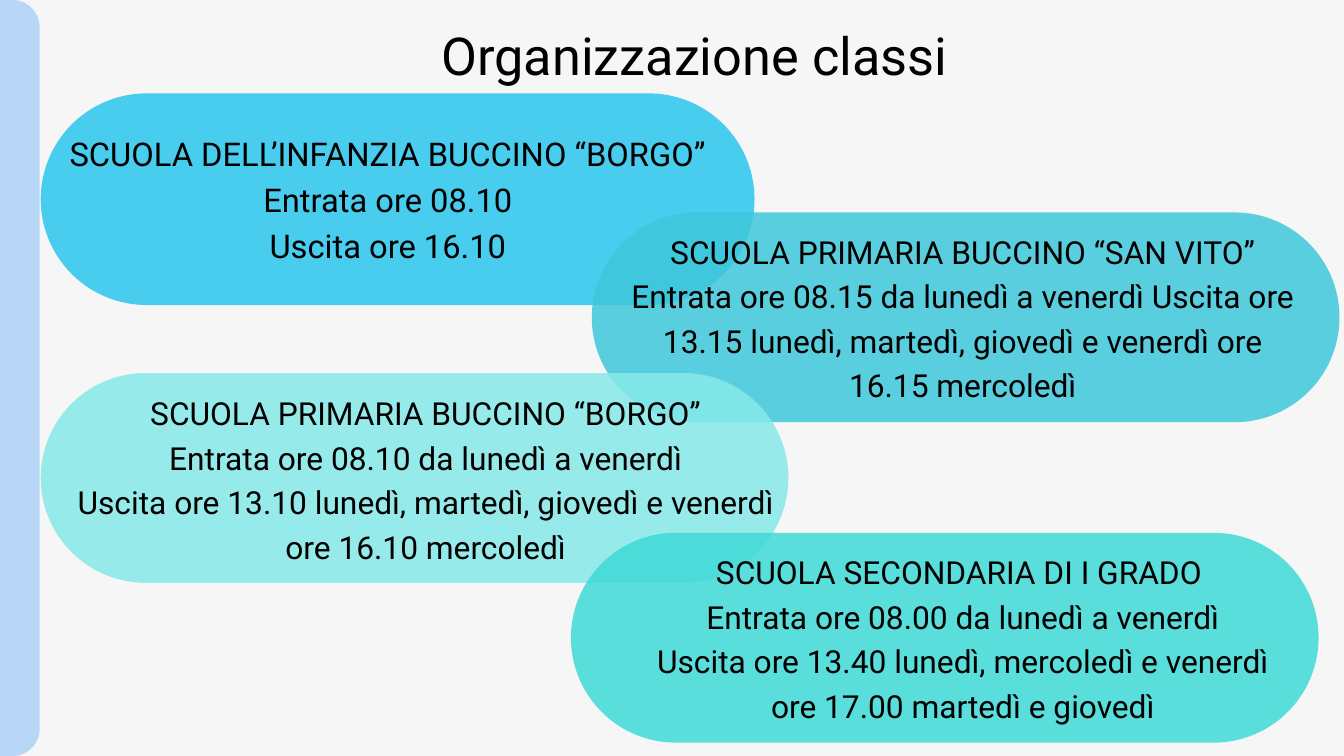
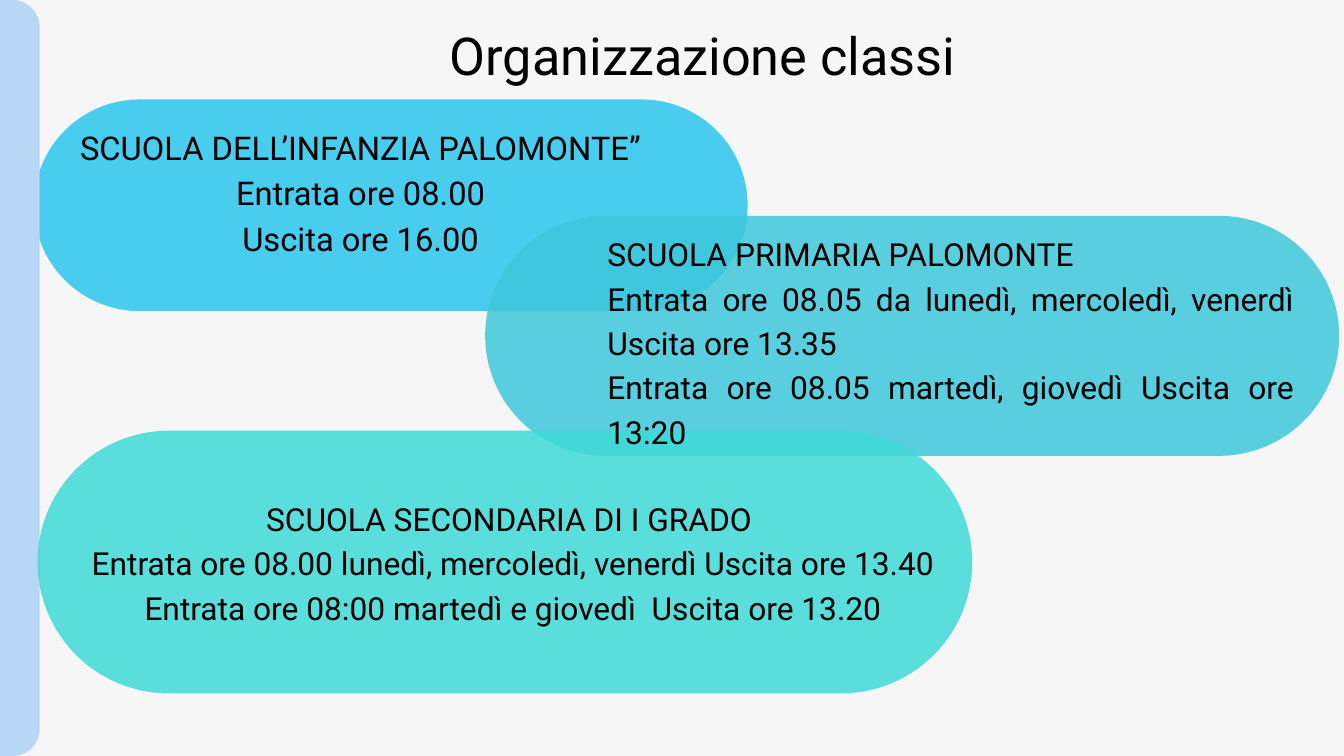
from dataclasses import dataclass

from lxml import etree
from pptx import Presentation
from pptx import util as u
from pptx.dml.color import RGBColor
from pptx.enum import shapes, text
from pptx.oxml.ns import qn

COLORS = {
    "background": "F6F6F6",
    "band": "B8D6F6",
    "ink": "000000",
    "infanzia": "37C9EF",
    "primaria": "3EC7DA",
    "borgo": "86EAE9",
    "secondaria": "3EDAD8",
}
FONT = "Roboto"
LEADING = 1.4  # line pitch as a multiple of the font size
TITLE = "Organizzazione classi"
CENTER = text.PP_ALIGN.CENTER
JUSTIFY = text.PP_ALIGN.JUSTIFY


@dataclass
class School:
    """A pill with its text; lengths in cm, the text inset is relative to the pill."""
    color: str
    box: tuple
    inset: tuple
    text_width: float
    rows: int
    lines: list
    size: int = 34
    align: int = CENTER
    opacity: int = 85


BUCCINO = [
    School("infanzia", (1.54, 3.53, 26.98, 8), (0.97, 1.3), 24.31, 3, [
        "SCUOLA DELL’INFANZIA BUCCINO “BORGO”",
        "Entrata ore 08.10",
        "Uscita ore 16.10",
    ], size=35, opacity=90),
    School("primaria", (22.37, 8.03, 28.26, 7.93), (1.04, 0.53), 25.96, 4, [
        "SCUOLA PRIMARIA BUCCINO “SAN VITO” Entrata ore 08.15 da lunedì a venerdì "
        "Uscita ore 13.15 lunedì, martedì, giovedì e venerdì ore 16.15 mercoledì",
    ]),
    School("borgo", (1.54, 14.1, 28.26, 7.93), (0.97, 0.56), 27.46, 4, [
        "SCUOLA PRIMARIA BUCCINO “BORGO” ",
        "Entrata ore 08.10 da lunedì a venerdì ",
        "Uscita ore 13.10 lunedì, martedì, giovedì e venerdì ",
        "ore 16.10 mercoledì ",
    ]),
    School("secondaria", (21.58, 20.14, 28.26, 7.93), (1.3, 0.53), 27.03, 4, [
        "SCUOLA SECONDARIA DI I GRADO ",
        "Entrata ore 08.00 da lunedì a venerdì",
        " Uscita ore 13.40 lunedì, mercoledì e venerdì ",
        "ore 17.00 martedì e giovedì",
    ]),
]

PALOMONTE = [
    School("infanzia", (1.28, 3.76, 26.98, 8), (1.56, 0.81), 21.59, 3, [
        "SCUOLA DELL’INFANZIA PALOMONTE”",
        "Entrata ore 08.00",
        "Uscita ore 16.00",
    ], size=35, opacity=90),
    School("primaria", (18.34, 8.16, 32.28, 9.07), (4.62, 0.48), 25.96, 5, [
        "SCUOLA PRIMARIA PALOMONTE",
        "Entrata ore 08.05 da lunedì, mercoledì, venerdì Uscita ore 13.35",
        "Entrata ore 08.05 martedì, giovedì Uscita ore 13:20",
    ], align=JUSTIFY),
    School("secondaria", (1.42, 16.28, 35.33, 9.93), (1.42, 2.36), 33.1, 3, [
        "SCUOLA SECONDARIA DI I GRADO ",
        "Entrata ore 08.00 lunedì, mercoledì, venerdì Uscita ore 13.40",
        "Entrata ore 08:00 martedì e giovedì  Uscita ore 13.20",
    ]),
]


def write_text(shape, lines, *, size, align=CENTER):
    """Fill a shape with paragraphs in the common text style."""
    frame = shape.text_frame
    frame.word_wrap = True
    frame.auto_size = text.MSO_AUTO_SIZE.NONE
    frame.vertical_anchor = text.MSO_ANCHOR.TOP
    frame.margin_left = frame.margin_top = frame.margin_right = frame.margin_bottom = 0
    for index, line in enumerate(lines):
        para = frame.paragraphs[0] if index == 0 else frame.add_paragraph()
        para.alignment = align
        para.line_spacing = u.Pt(size * LEADING)
        para.space_before = para.space_after = u.Pt(0)
        span = para.add_run()
        span.text = line
        span.font.name = FONT
        span.font.size = u.Pt(size)
        span.font.color.rgb = RGBColor.from_string(COLORS["ink"])


def add_round_box(page, box, color, *, roundness=0.5, opacity=100):
    """Draw a borderless rounded rectangle; box is in EMU."""
    shape = page.shapes.add_shape(shapes.MSO_SHAPE.ROUNDED_RECTANGLE, *box)
    shape.adjustments[0] = roundness
    shape.shadow.inherit = False
    shape.line.fill.background()
    shape.fill.solid()
    shape.fill.fore_color.rgb = RGBColor.from_string(COLORS[color])
    if opacity < 100:
        tint = shape.fill._xPr.find(qn("a:solidFill"))[0]
        etree.SubElement(tint, qn("a:alpha"), val=str(opacity * 1000))


def add_pill(page, school):
    add_round_box(page, map(u.Cm, school.box), school.color, opacity=school.opacity)


def add_school_text(page, school):
    left, top = (school.box[i] + school.inset[i] for i in range(2))
    height = u.Pt(school.rows * school.size * LEADING)
    box = page.shapes.add_textbox(u.Cm(left), u.Cm(top), u.Cm(school.text_width), height)
    write_text(box, school.lines, size=school.size, align=school.align)


def add_schedule_page(deck, schools, title_width):
    page = deck.slides.add_slide(deck.slide_layouts[5])

    # Title
    title = page.shapes.title
    title.left, title.top = u.Cm(15.67), u.Cm(0.48)
    title.width, title.height = u.Cm(title_width), u.Cm(2.77)
    write_text(title, [TITLE], size=56)

    # Pills, with the side band above the first one
    first, *others = schools
    add_pill(page, first)
    band = (u.Cm(-3.91), 0, u.Cm(5.41), deck.slide_height)
    add_round_box(page, band, "band", roundness=0.19)
    for school in others:
        add_pill(page, school)

    # Opening hours
    for school in schools:
        add_school_text(page, school)


def main():
    deck = Presentation()
    deck.slide_width = u.Cm(50.8)
    deck.slide_height = deck.slide_width * 9 // 16
    backdrop = deck.slide_master.background.fill
    backdrop.solid()
    backdrop.fore_color.rgb = RGBColor.from_string(COLORS["background"])

    add_schedule_page(deck, BUCCINO, title_width=21.16)
    add_schedule_page(deck, PALOMONTE, title_width=21.79)
    deck.save("out.pptx")


if __name__ == "__main__":
    main()
